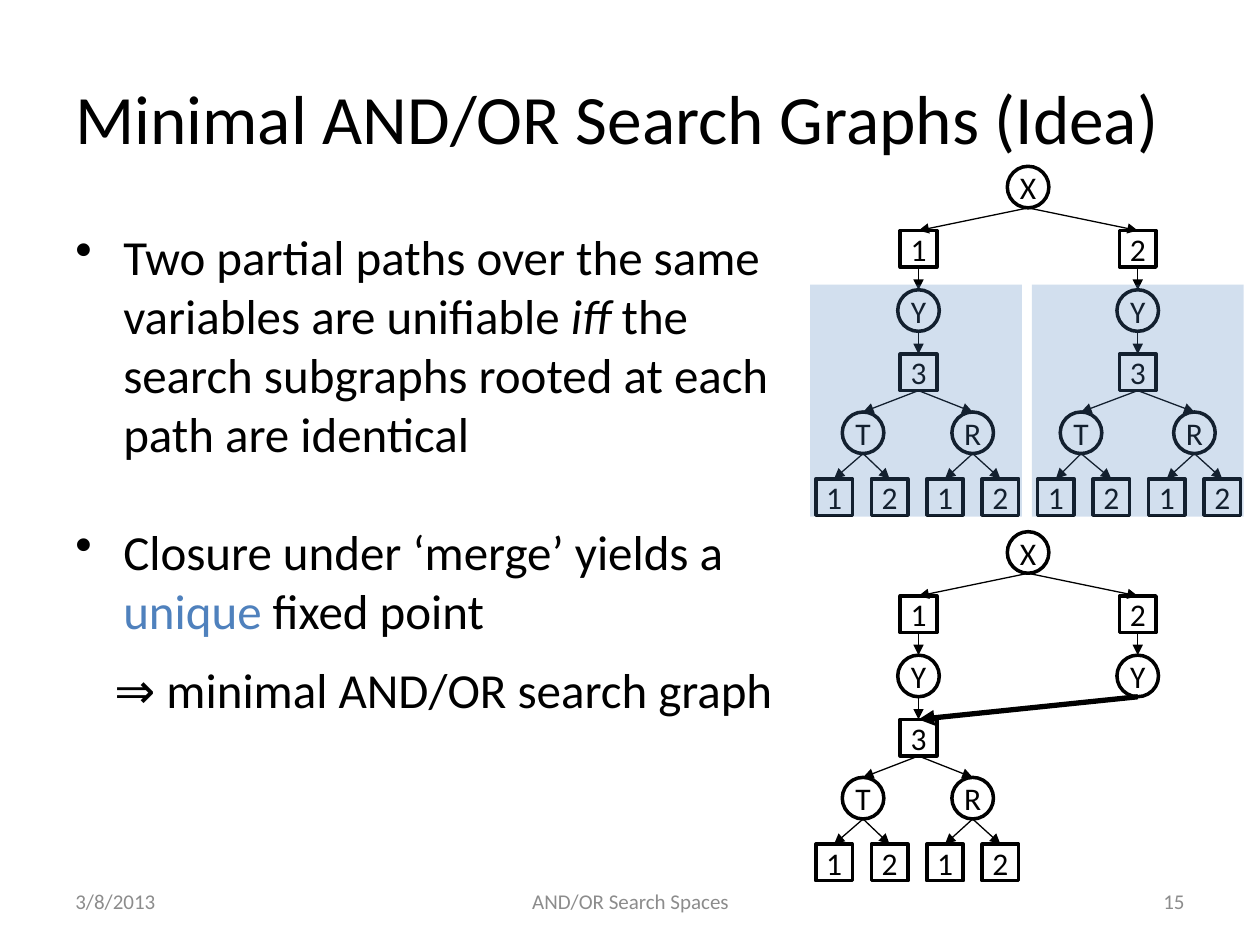
import pptx
import pptx.dml.color
import pptx.enum.shapes
import pptx.enum.text
import pptx.oxml
import pptx.oxml.ns
import pptx.util

Inches, Pt = pptx.util.Inches, pptx.util.Pt
RGB = pptx.dml.color.RGBColor.from_string
ALIGN = pptx.enum.text.PP_ALIGN
SHAPE = pptx.enum.shapes.MSO_SHAPE
MIDDLE = pptx.enum.text.MSO_ANCHOR.MIDDLE

THEME = {
    "font": "Calibri", "black": "000000", "white": "FFFFFF",
    "grey": "8C8C8C", "blue": "4F81BD",
    "title": 39.6, "body": 28, "node": 18, "footer": 12,
}


def set_format(obj, values):
    for name, value in values.items():
        setattr(obj, name, value)


def write(p, text, size, color="black", italic=False):
    r = p.add_run()
    r.text = text
    set_format(r.font, {"name": THEME["font"], "size": Pt(THEME[size]), "italic": italic})
    r.font.color.rgb = RGB(THEME[color])


prs = pptx.Presentation()
set_format(prs, {"slide_width": Inches(10), "slide_height": Inches(7.5)})
s = prs.slides.add_slide(prs.slide_layouts[6])

# Title and footer
for text, box, size, color, align in [
    ("Minimal AND/OR Search Graphs (Idea)", (0.5, 0.3, 9, 1.25), "title", "black", ALIGN.LEFT),
    ("3/8/2013", (0.5, 6.95, 2.33, 0.4), "footer", "grey", ALIGN.LEFT),
    ("15", (7.17, 6.95, 2.33, 0.4), "footer", "grey", ALIGN.RIGHT),
    ("AND/OR Search Spaces", (3.42, 6.95, 3.17, 0.4), "footer", "grey", ALIGN.CENTER),
]:
    tf = s.shapes.add_textbox(*map(Inches, box)).text_frame
    set_format(tf, {"word_wrap": True, "vertical_anchor": MIDDLE})
    tf.paragraphs[0].alignment = align
    write(tf.paragraphs[0], text, size, color)

# Body: runs, left margin, first-line indent, space before, bulleted
tf = s.shapes.add_textbox(*map(Inches, (0.5, 1.75, 6.09, 4.95))).text_frame
tf.word_wrap = True
body = [
    ([("Two partial paths over the same variables are unifiable ", "black", False),
      ("iff", "black", True),
      (" the search subgraphs rooted at each path are identical", "black", False)],
     0.38, -0.38, 5.6, True),
    ([("Closure under ‘merge’ yields a ", "black", False),
      ("unique ", "blue", False),
      ("fixed point", "black", False)],
     0.38, -0.38, 28, True),
    ([("⇒ minimal AND/OR search graph", "black", False)], 0.75, -0.44, 5.6, False),
]
for i, (runs, margin, indent, before, bulleted) in enumerate(body):
    p = tf.paragraphs[0] if i == 0 else tf.add_paragraph()
    set_format(p, {"space_before": Pt(before), "space_after": Pt(6 if bulleted else 0)})
    pPr = p._p.get_or_add_pPr()
    pPr.set("marL", str(Inches(margin)))
    pPr.set("indent", str(Inches(indent)))
    if bulleted:
        pPr.append(pptx.oxml.parse_xml(
            f'<a:buChar {pptx.oxml.ns.nsdecls("a")} char="•"/>'))
    for text, color, italic in runs:
        write(p, text, "body", color, italic)

# Graph rules: rows hold the top of each level, columns the node centres
CIRCLE, SQUARE = 0.33, 0.29
ROWS = {"X": 1.32, "value": 1.83, "Y": 2.3, "3": 2.81, "TR": 3.27, "leaf": 3.8}
ROOT_X = 8.16
BRANCHES = [  # value, centre, centres of T and R, centre of first leaf
    ("1", 7.29, (6.85, 7.72), 6.62),
    ("2", 9.03, (8.58, 9.48), 8.38),
]
LEAF_STEP = 0.44
GRAPH_STEP = 2.9

for graph in range(2):
    merged = graph == 1
    nodes = [("X", ROOT_X, "X")]  # label, centre, row
    edges = []  # start centre, start row, end centre, end row, width
    for value, x, pair, first_leaf in BRANCHES:
        nodes += [(value, x, "value"), ("Y", x, "Y")]
        edges += [(ROOT_X, "X", x, "value", 0.75), (x, "value", x, "Y", 0.75)]
        if merged and value == "2":
            edges.append((x, "Y", BRANCHES[0][1], "3", 3))
            continue
        nodes.append(("3", x, "3"))
        edges.append((x, "Y", x, "3", 0.75))
        for i, (label, cx) in enumerate(zip("TR", pair)):
            nodes.append((label, cx, "TR"))
            edges.append((x, "3", cx, "TR", 0.75))
            for j, leaf in enumerate("12"):
                leaf_x = first_leaf + (2 * i + j) * LEAF_STEP
                nodes.append((leaf, leaf_x, "leaf"))
                edges.append((cx, "TR", leaf_x, "leaf", 0.75))

    # Nodes: circles for variables, squares for values
    for label, cx, row in nodes:
        size = CIRCLE if label.isalpha() else SQUARE
        sp = s.shapes.add_shape(
            SHAPE.OVAL if label.isalpha() else SHAPE.RECTANGLE,
            Inches(cx - size / 2), Inches(ROWS[row] + graph * GRAPH_STEP),
            Inches(size), Inches(size))
        sp.shadow.inherit = False
        sp.fill.solid()
        sp.fill.fore_color.rgb = RGB(THEME["white"])
        sp.line.color.rgb = RGB(THEME["black"])
        sp.line.width = Pt(2)
        set_format(sp.text_frame, {
            "margin_left": 0, "margin_right": 0, "margin_top": 0, "margin_bottom": 0,
            "word_wrap": False, "vertical_anchor": MIDDLE})
        p = sp.text_frame.paragraphs[0]
        p.alignment = ALIGN.CENTER
        write(p, label, "node")

    # Arrows from the bottom of a node to the top of its child
    for x1, row1, x2, row2, width in edges:
        size = CIRCLE if row1 in ("X", "Y", "TR") else SQUARE
        line = s.shapes.add_connector(
            pptx.enum.shapes.MSO_CONNECTOR.STRAIGHT,
            Inches(x1), Inches(ROWS[row1] + size + graph * GRAPH_STEP),
            Inches(x2), Inches(ROWS[row2] + graph * GRAPH_STEP))
        line.line.color.rgb = RGB(THEME["black"])
        line.line.width = Pt(width)
        ns = pptx.oxml.ns.nsdecls("a")
        line.line._get_or_add_ln().append(
            pptx.oxml.parse_xml(f'<a:tailEnd {ns} type="triangle"/>'))
        line._element.spPr.append(pptx.oxml.parse_xml(f"<a:effectLst {ns}/>"))

    # Translucent panels over the identical subgraphs
    if not merged:
        for left in (6.43, 8.19):
            sp = s.shapes.add_shape(
                SHAPE.RECTANGLE, *map(Inches, (left, 2.26, 1.68, 1.84)))
            sp.shadow.inherit = False
            sp.line.fill.background()
            sp.fill.solid()
            sp.fill.fore_color.rgb = RGB(THEME["blue"])
            color = sp._element.spPr.find(".//" + pptx.oxml.ns.qn("a:srgbClr"))
            color.append(pptx.oxml.parse_xml(
                f'<a:alpha {pptx.oxml.ns.nsdecls("a")} val="25000"/>'))

prs.save("out.pptx")
